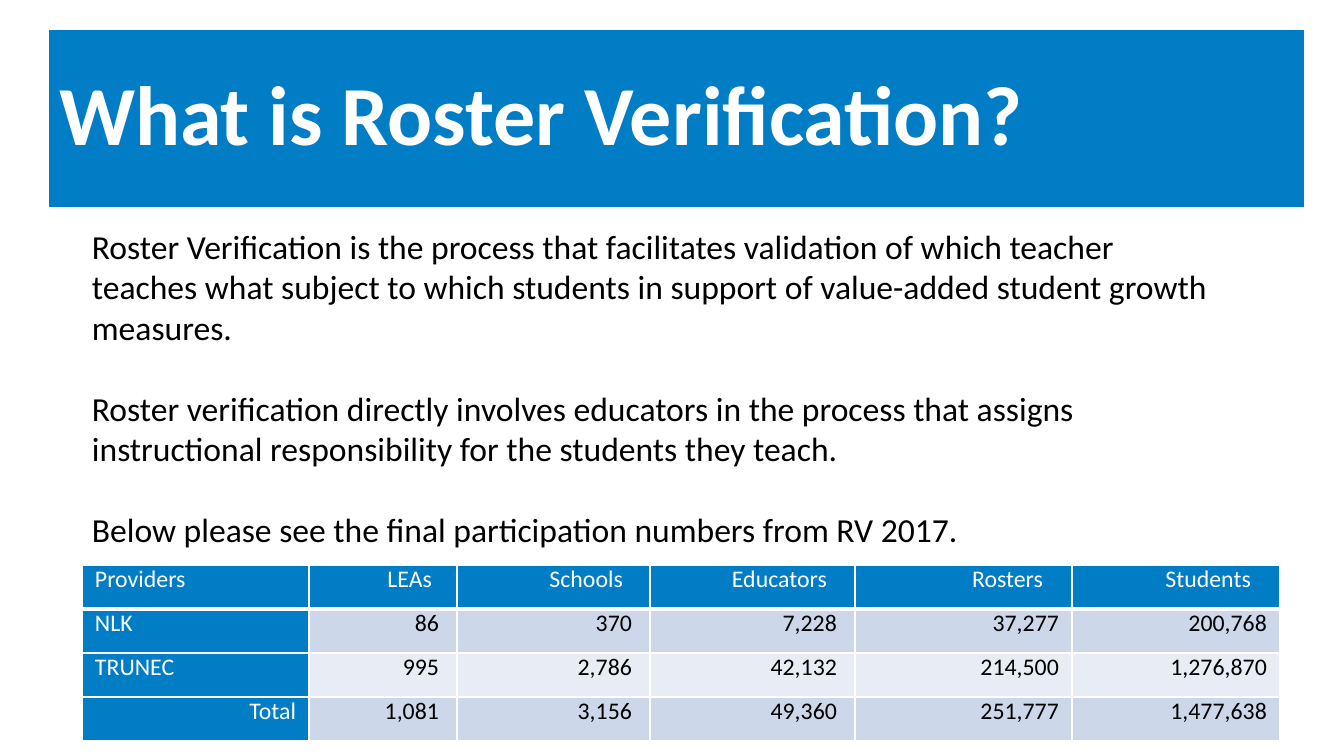
"""Build the roster verification slide with its participation table."""
from lxml.etree import SubElement
from pptx import Presentation
from pptx.dml.color import RGBColor
from pptx.enum.text import MSO_ANCHOR, MSO_AUTO_SIZE, PP_ALIGN
from pptx.oxml.ns import qn
from pptx.util import Emu, Pt

BLUE = RGBColor(0x00, 0x7D, 0xC5)
BAND_DARK = RGBColor(0xCC, 0xD7, 0xEA)
BAND_LIGHT = RGBColor(0xE7, 0xEC, 0xF5)
WHITE = RGBColor(0xFF, 0xFF, 0xFF)
BLACK = RGBColor(0x00, 0x00, 0x00)
FONT = "Calibri"

TITLE = "What is Roster Verification?"
BODY = [
    "Roster Verification is the process that facilitates validation of which teacher "
    "teaches what subject to which students in support of value-added student growth measures.",
    "Roster verification directly involves educators in the process that assigns "
    "instructional responsibility for the students they teach.",
    "Below please see the final participation numbers from RV 2017.",
]
ROWS = [
    ["Providers", "LEAs", "Schools", "Educators", "Rosters", "Students"],
    ["NLK", "86", "370", "7,228", "37,277", "200,768"],
    ["TRUNEC", "995", "2,786", "42,132", "214,500", "1,276,870"],
    ["Total", "1,081", "3,156", "49,360", "251,777", "1,477,638"],
]
TITLE_BOX = (49, 30, 1255, 177)
BODY_BOX = (82, 221, 1142, 417)
TABLE_LEFT, TABLE_TOP, ROW_HEIGHT = 82, 565, 44
COLUMN_WIDTHS = [227, 148, 193, 205, 217, 208]
HEADER_INSETS = [13, 25, 27, 28, 29, 29]
NUMBER_INSETS = [13, 18, 18, 18, 13, 13]


def px(length):
    """Turn slide pixels into EMU."""
    return Emu(round(length * 914400 / 100.8))


def add_run(paragraph, text, size, color, bold=False):
    """Add one formatted run to a paragraph."""
    run = paragraph.add_run()
    run.text = text
    run.font.name = FONT
    run.font.size = Pt(size)
    run.font.bold = bold
    run.font.color.rgb = color


def add_borders(cell, widths):
    """Draw white cell borders, given as points for each side."""
    properties = cell._tc.get_or_add_tcPr()
    for side, width in widths.items():
        line = SubElement(properties, qn(f"a:ln{side}"), w=str(Pt(width)))
        fill = SubElement(line, qn("a:solidFill"))
        SubElement(fill, qn("a:srgbClr"), val=str(WHITE))


def add_title(slide):
    """Format and fill the title placeholder."""
    title = slide.shapes.title
    title.left, title.top, title.width, title.height = map(px, TITLE_BOX)
    title.fill.solid()
    title.fill.fore_color.rgb = BLUE
    frame = title.text_frame
    frame.auto_size = MSO_AUTO_SIZE.NONE
    frame.vertical_anchor = MSO_ANCHOR.MIDDLE
    paragraph = frame.paragraphs[0]
    paragraph.alignment = PP_ALIGN.LEFT
    paragraph.line_spacing = 0.9
    add_run(paragraph, TITLE, 60, WHITE, bold=True)


def add_body(slide):
    """Add the explanatory paragraphs."""
    frame = slide.shapes.add_textbox(*map(px, BODY_BOX)).text_frame
    frame.word_wrap = True
    for index, text in enumerate(BODY):
        paragraph = frame.add_paragraph() if index else frame.paragraphs[0]
        if index:
            paragraph.space_before = Pt(29)
        add_run(paragraph, text, 24, BLACK)


def format_cell(cell, text, row, column):
    """Fill, border and write one table cell."""
    is_header = row == 0
    is_blue = is_header or column == 0
    add_borders(cell, {"L": 1, "R": 1, "T": 3 if row == 1 else 1, "B": 3 if is_header else 1})
    cell.fill.solid()
    cell.fill.fore_color.rgb = BLUE if is_blue else BAND_DARK if row % 2 else BAND_LIGHT
    cell.margin_left = px(13)
    cell.margin_right = px((HEADER_INSETS if is_header else NUMBER_INSETS)[column])
    cell.margin_top = cell.margin_bottom = 0
    paragraph = cell.text_frame.paragraphs[0]
    is_right = column > 0 or text == "Total"
    paragraph.alignment = PP_ALIGN.RIGHT if is_right else PP_ALIGN.LEFT
    add_run(paragraph, text, 17, WHITE if is_blue else BLACK)


def add_participation_table(slide):
    """Add the table of participation numbers."""
    table = slide.shapes.add_table(
        len(ROWS), len(COLUMN_WIDTHS), px(TABLE_LEFT), px(TABLE_TOP),
        px(sum(COLUMN_WIDTHS)), px(ROW_HEIGHT * len(ROWS))).table
    for column, width in zip(table.columns, COLUMN_WIDTHS):
        column.width = px(width)
    for row, texts in enumerate(ROWS):
        table.rows[row].height = px(ROW_HEIGHT)
        for column, text in enumerate(texts):
            format_cell(table.cell(row, column), text, row, column)


def main():
    """Build and save the presentation."""
    presentation = Presentation()
    presentation.slide_width, presentation.slide_height = px(1344), px(756)
    slide = presentation.slides.add_slide(presentation.slide_layouts[5])
    add_title(slide)
    add_body(slide)
    add_participation_table(slide)
    presentation.save("out.pptx")


if __name__ == "__main__":
    main()
